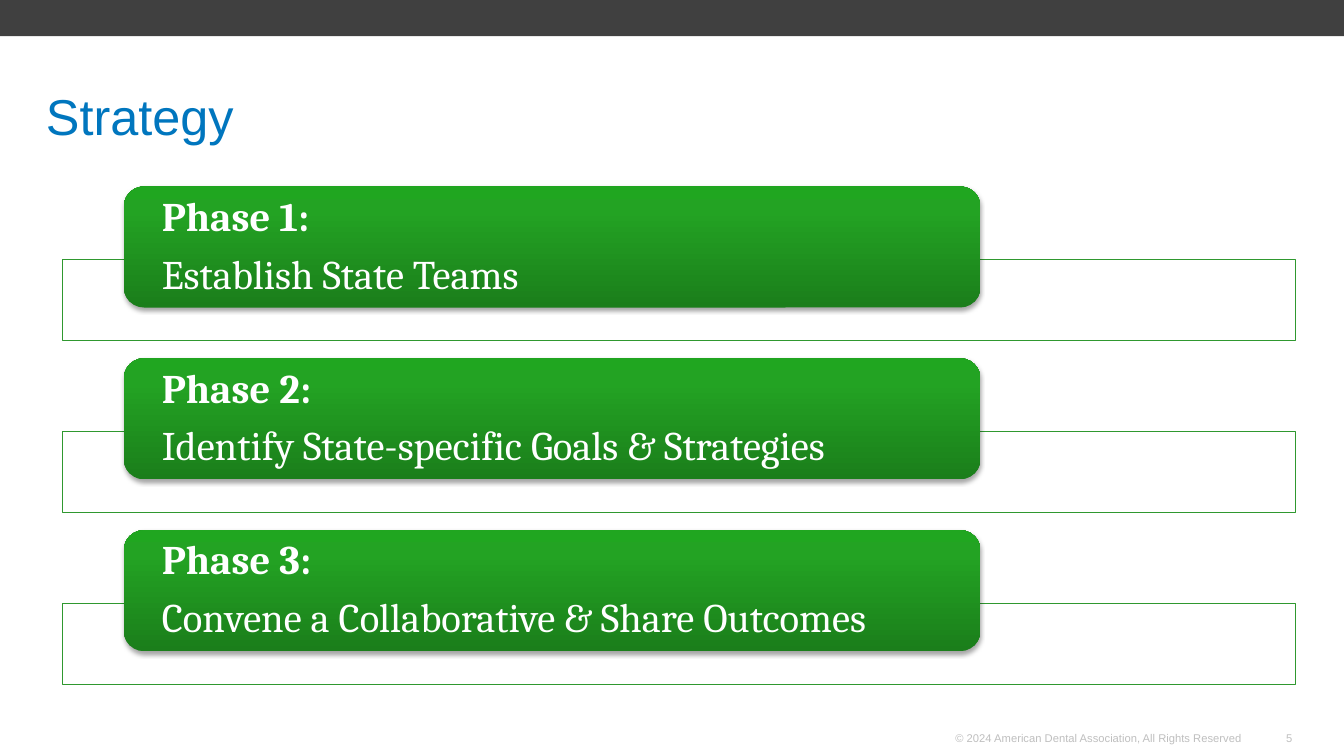
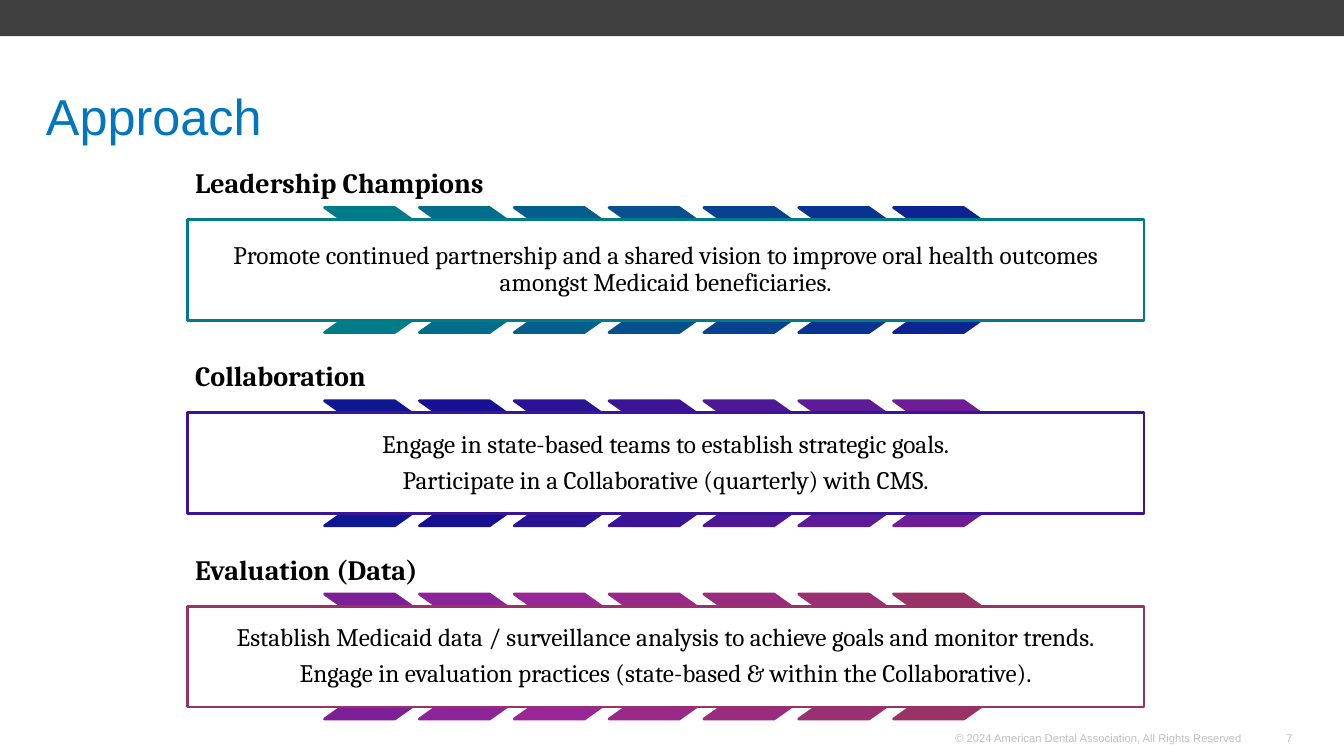
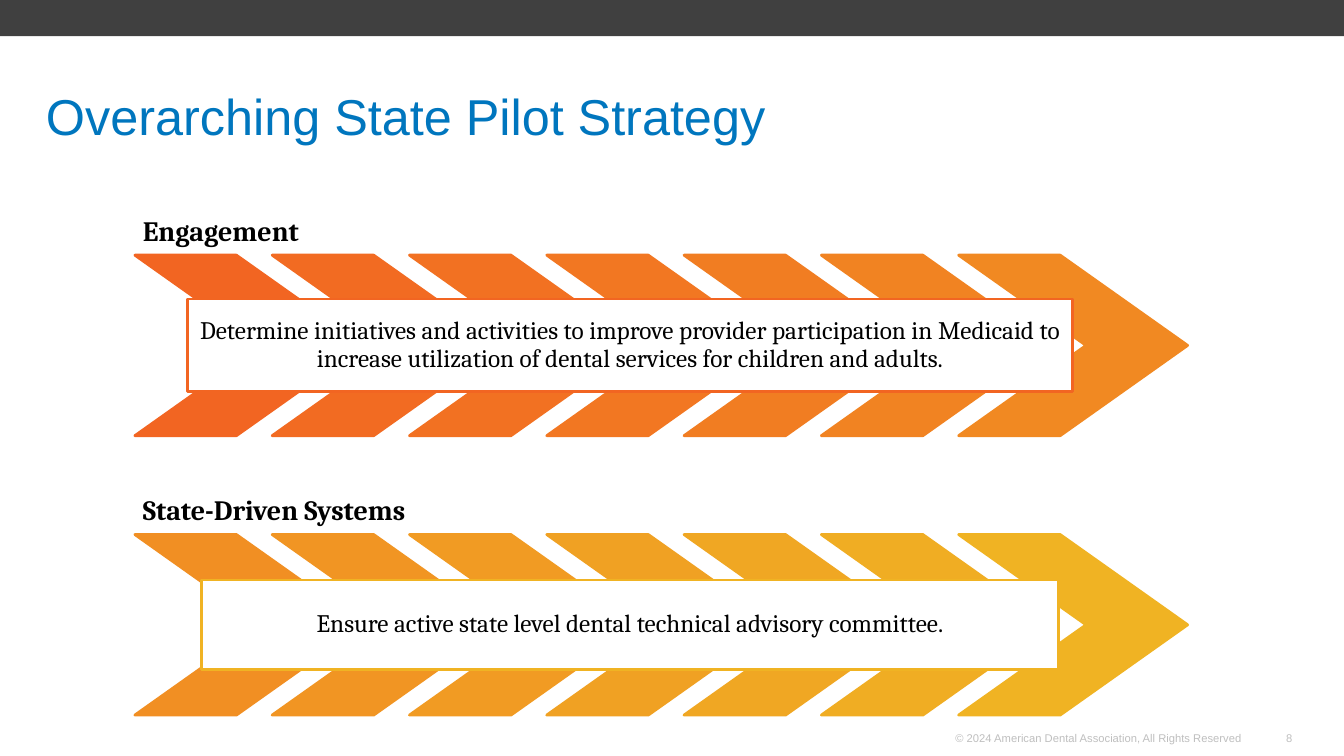
from copy import deepcopy

from lxml.etree import SubElement
from pptx import Presentation
from pptx.dml.color import RGBColor
from pptx.enum.shapes import MSO_SHAPE as Shape
from pptx.enum.text import MSO_ANCHOR as Anchor, PP_ALIGN as Align
from pptx.oxml.ns import qn
from pptx.util import Cm, Pt

COPYRIGHT = "© 2024 American Dental Association, All Rights Reserved"
SANS, SERIF = "Arial", "Cambria"
BLACK, WHITE = "000000", "FFFFFF"
BAND, FOOTER, TITLE = "404040", "BFBFBF", "0076BE"
PHASE_LINE = "2F982F"
PHASE_GRADIENT = [(0, "1B7E1B"), (0.8, "23A323"), (1, "20A620")]

PHASES = [
    ("Phase 1:", "Establish State Teams"),
    ("Phase 2:", "Identify State-specific Goals & Strategies"),
    ("Phase 3:", "Convene a Collaborative & Share Outcomes"),
]

# Each row: heading, lines, chevron colours, index of the card's line colour, card size
APPROACH = [
    ("Leadership Champions",
     ["Promote continued partnership and a shared vision to improve oral health "
      "outcomes amongst Medicaid beneficiaries."],
     "007C89 026D8B 045E8C 06508E 08418F 0A3290 0C2491", 0, (24.1, 2.54)),
    ("Collaboration",
     ["Engage in state-based teams to establish strategic goals.",
      "Participate in a Collaborative (quarterly) with CMS."],
     "0E1692 181093 2A1394 3B1595 4D1896 5D1B97 6E1D97", 3, (24.1, 2.54)),
    ("Evaluation (Data)",
     ["Establish Medicaid data / surveillance analysis to achieve goals and monitor trends.",
      "Engage in evaluation practices (state-based & within the Collaborative)."],
     "7D2098 8C2398 982696 992989 992C7D 993071 993366", 6, (24.1, 2.54)),
]
PILOT = [
    ("Engagement",
     ["Determine initiatives and activities to improve provider participation in "
      "Medicaid to increase utilization of dental services for children and adults."],
     "F26522 F26B22 F27122 F27722 F17D22 F18322 F18922", 0, (22.3, 2.34)),
    ("State-Driven Systems",
     ["Ensure active state level dental technical advisory committee."],
     "F18F23 F19523 F19B23 F0A123 F0A723 F0AD23 F0B323", 6, (21.59, 2.26)),
]

# Lengths in centimetres
APPROACH_LAYOUT = dict(top=5.23, pitch=4.87, heading=(4.72, 16.99, 1.55),
                       chevron=(8.18, 3.99, 3.15), step=2.39, center=16.78)
PILOT_LAYOUT = dict(top=6.43, pitch=7.04, heading=(3.4, 24.61, 2.24),
                    chevron=(3.4, 5.77, 4.55), step=3.46, center=15.88)


def color(value):
    return RGBColor.from_string(value)


def add_box(slide, kind, left, top, width, height, fill=None, line=None, line_width=2):
    shape = slide.shapes.add_shape(kind, Cm(left), Cm(top), Cm(width), Cm(height))
    shape.shadow.inherit = False
    if fill:
        shape.fill.solid()
        shape.fill.fore_color.rgb = color(fill)
    if line:
        shape.line.color.rgb = color(line)
        shape.line.width = Pt(line_width)
    else:
        shape.line.fill.background()
    return shape


def write(shape, lines, size=18, font=SERIF, ink=BLACK, bold_lines=0, align=Align.LEFT,
          anchor=Anchor.MIDDLE, insets=(0.13, 0.13), line_spacing=0.9, after=0.35):
    """Fill a shape with paragraphs; after is a share of the text size."""
    frame = shape.text_frame
    frame.word_wrap = True
    frame.vertical_anchor = anchor
    frame.margin_left = frame.margin_right = Cm(insets[0])
    frame.margin_top = frame.margin_bottom = Cm(insets[1])
    for index, line in enumerate(lines):
        paragraph = frame.paragraphs[0] if index == 0 else frame.add_paragraph()
        paragraph.alignment = align
        paragraph.line_spacing = line_spacing
        paragraph.space_after = Pt(round(size * after, 1))
        run = paragraph.add_run()
        run.text = line
        run.font.size = Pt(size)
        run.font.name = font
        run.font.bold = index < bold_lines
        run.font.color.rgb = color(ink)


def add_text(slide, left, top, width, height, lines, **text_format):
    box = slide.shapes.add_textbox(Cm(left), Cm(top), Cm(width), Cm(height))
    write(box, lines, **text_format)


def add_slide(presentation, title, number):
    """Add a slide with the shared band, footer and title."""
    slide = presentation.slides.add_slide(presentation.slide_layouts[6])
    plain = dict(font=SANS, insets=(0.25, 0.13), line_spacing=1, after=0)
    add_box(slide, Shape.RECTANGLE, 0, 0, 33.87, 0.91, fill=BAND)
    for left, width, text in [(20.55, 11, COPYRIGHT), (31.12, 1.7, str(number))]:
        add_text(slide, left, 18.31, width, 0.61, [text], size=8, ink=FOOTER,
                 align=Align.RIGHT, anchor=Anchor.TOP, **plain)
    add_text(slide, 0.91, 2.01, 31.55, 1.78, [title], size=36, ink=TITLE, **plain)
    return slide


def set_gradient(shape, stops, angle):
    shape.fill.gradient()
    shape.fill.gradient_angle = angle
    stop_list = shape._element.spPr.find(".//" + qn("a:gsLst"))
    while len(stop_list) < len(stops):
        stop_list.append(deepcopy(stop_list[-1]))
    for stop, (position, value) in zip(shape.fill.gradient_stops, stops):
        stop.position = position
        stop.color.rgb = color(value)


def add_shadow(shape):
    effects = shape._element.spPr.find(qn("a:effectLst"))
    shadow = SubElement(effects, qn("a:outerShdw"), blurRad=str(Pt(3.1)),
                        dist=str(Pt(1.8)), dir="5400000", rotWithShape="0")
    shade = SubElement(shadow, qn("a:srgbClr"), val=BLACK)
    SubElement(shade, qn("a:alpha"), val="35000")


def add_phases(slide):
    for index, lines in enumerate(PHASES):
        top = 4.7 + index * 4.33
        add_box(slide, Shape.RECTANGLE, 1.57, top + 1.85, 31.09, 2.03,
                fill=WHITE, line=PHASE_LINE, line_width=0.75)
        pill = add_box(slide, Shape.ROUNDED_RECTANGLE, 3.12, top, 21.59, 3.05)
        set_gradient(pill, PHASE_GRADIENT, 90)
        add_shadow(pill)
        write(pill, lines, size=29, ink=WHITE, bold_lines=1, insets=(0.81, 0))


def add_chevron_rows(slide, rows, top, pitch, heading, chevron, step, center):
    """Stack rows of a heading, a chevron band and a card centred on the band."""
    heading_left, heading_width, heading_height = heading
    chevron_left, chevron_width, chevron_height = chevron
    for row, (title, lines, palette, accent, (width, height)) in enumerate(rows):
        row_top = top + row * pitch
        colors = palette.split()
        add_text(slide, heading_left, row_top - heading_height, heading_width, heading_height,
                 [title], size=20, bold_lines=1, anchor=Anchor.BOTTOM, insets=(0.2, 0.2))
        for column, value in enumerate(colors):
            arrow = add_box(slide, Shape.CHEVRON, chevron_left + column * step, row_top,
                            chevron_width, chevron_height, fill=value, line=value)
            arrow.adjustments[0] = 0.706
        card = add_box(slide, Shape.RECTANGLE, center - width / 2,
                       row_top + (chevron_height - height) / 2, width, height,
                       fill=WHITE, line=colors[accent])
        write(card, lines, align=Align.CENTER)


def main():
    presentation = Presentation()
    presentation.slide_width, presentation.slide_height = Cm(33.87), Cm(19.05)
    add_phases(add_slide(presentation, "Strategy", 5))
    add_chevron_rows(add_slide(presentation, "Approach", 7), APPROACH, **APPROACH_LAYOUT)
    add_chevron_rows(add_slide(presentation, "Overarching State Pilot Strategy", 8),
                     PILOT, **PILOT_LAYOUT)
    presentation.save("out.pptx")


if __name__ == "__main__":
    main()
